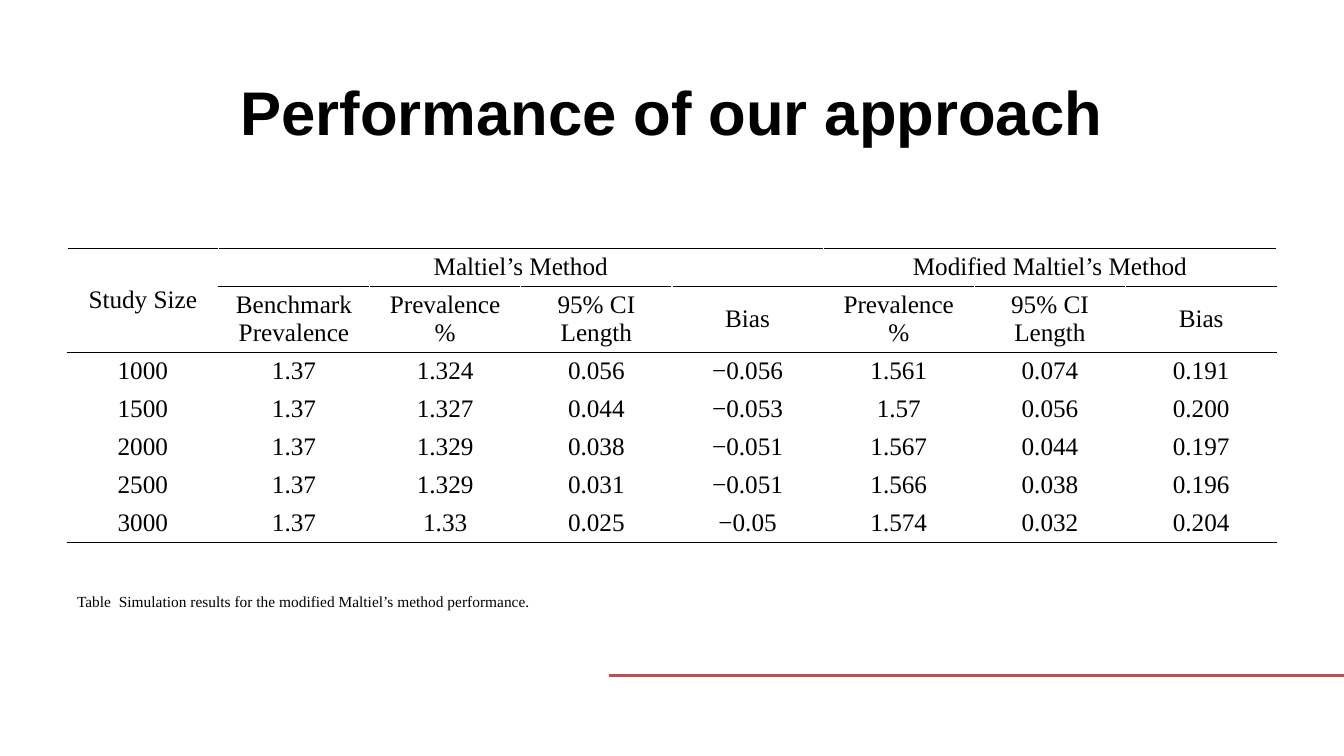
from lxml.etree import SubElement
from pptx import Presentation
from pptx.dml.color import RGBColor
from pptx.enum.shapes import MSO_CONNECTOR
from pptx.enum.text import MSO_ANCHOR, PP_ALIGN
from pptx.oxml.ns import qn
from pptx.util import Pt

TITLE = "Performance of our approach"
CAPTION = "Table  Simulation results for the modified Maltiel’s method performance."
ROWS = [
    ["Study Size", "Maltiel’s Method", "", "", "", "Modified Maltiel’s Method", "", ""],
    ["", "Benchmark Prevalence", "Prevalence%", "95% CI Length", "Bias",
     "Prevalence%", "95% CI Length", "Bias"],
    ["1000", "1.37", "1.324", "0.056", "−0.056", "1.561", "0.074", "0.191"],
    ["1500", "1.37", "1.327", "0.044", "−0.053", "1.57", "0.056", "0.200"],
    ["2000", "1.37", "1.329", "0.038", "−0.051", "1.567", "0.044", "0.197"],
    ["2500", "1.37", "1.329", "0.031", "−0.051", "1.566", "0.038", "0.196"],
    ["3000", "1.37", "1.33", "0.025", "−0.05", "1.574", "0.032", "0.204"],
]
MERGES = [((0, 0), (1, 0)), ((0, 1), (0, 4)), ((0, 5), (0, 7))]
RULED_SIDES = {0: ["lnT", "lnB"], 1: ["lnT", "lnB"], 2: ["lnT"], 6: ["lnB"]}
BLACK, RED = "000000", "C0504D"
SERIF = "Times New Roman"
PAGE_WIDTH, PAGE_HEIGHT = 960, 540
MARGIN = 48
CONTENT_WIDTH = PAGE_WIDTH - 2 * MARGIN
ROW_HEIGHT, HEADING_HEIGHT = 27.14, 47.14


def color(value):
    return RGBColor.from_string(value)


def format_text(para, font_name, size, alignment, bold=False):
    para.alignment = alignment
    for span in para.runs:
        span.font.name = font_name
        span.font.size = Pt(size)
        span.font.bold = bold
        span.font.color.rgb = color(BLACK)


def add_rule(cell, side):
    """Draw a thin black border on one side of a cell."""
    border = SubElement(cell._tc.get_or_add_tcPr(), qn(f"a:{side}"), w=str(Pt(0.5)))
    fill = SubElement(border, qn("a:solidFill"))
    SubElement(fill, qn("a:srgbClr"), val=BLACK)


def add_results(page):
    frame = page.shapes.add_table(
        len(ROWS), len(ROWS[0]), Pt(MARGIN), Pt(177.12), Pt(CONTENT_WIDTH),
        Pt(ROW_HEIGHT * (len(ROWS) - 1) + HEADING_HEIGHT))
    table = frame.table
    table.first_row = False
    table.horz_banding = False
    for column in table.columns:
        column.width = Pt(CONTENT_WIDTH / len(ROWS[0]))
    for first, last in MERGES:
        table.cell(*first).merge(table.cell(*last))
    for row_index, values in enumerate(ROWS):
        table.rows[row_index].height = Pt(HEADING_HEIGHT if row_index == 1 else ROW_HEIGHT)
        for column_index, value in enumerate(values):
            cell = table.cell(row_index, column_index)
            if not cell.is_spanned or row_index == 0:
                for side in RULED_SIDES.get(row_index, []):
                    add_rule(cell, side)
            cell.fill.background()
            if cell.is_spanned:
                continue
            cell.vertical_anchor = MSO_ANCHOR.MIDDLE
            cell.text_frame.text = value
            format_text(cell.text_frame.paragraphs[0], SERIF, 18, PP_ALIGN.CENTER)


def main():
    deck = Presentation()
    deck.slide_width, deck.slide_height = Pt(PAGE_WIDTH), Pt(PAGE_HEIGHT)
    page = deck.slides.add_slide(deck.slide_layouts[5])

    accent = page.shapes.add_connector(
        MSO_CONNECTOR.STRAIGHT, Pt(434.88), Pt(482.4), Pt(PAGE_WIDTH), Pt(482.4))
    accent.line.color.rgb = color(RED)
    accent.line.width = Pt(2.25)
    SubElement(accent._element.spPr, qn("a:effectLst"))

    title = page.shapes.title
    title.left, title.top = Pt(MARGIN), Pt(13)
    title.width, title.height = Pt(CONTENT_WIDTH), Pt(132.5)
    title.text_frame.text = TITLE
    title.text_frame.vertical_anchor = MSO_ANCHOR.MIDDLE
    format_text(title.text_frame.paragraphs[0], "Arial", 44, PP_ALIGN.CENTER, bold=True)

    add_results(page)

    caption = page.shapes.add_textbox(Pt(MARGIN), Pt(419), Pt(412), Pt(20.6))
    caption.text_frame.word_wrap = True
    caption.text_frame.vertical_anchor = MSO_ANCHOR.MIDDLE
    caption.text_frame.text = CAPTION
    format_text(caption.text_frame.paragraphs[0], SERIF, 11, PP_ALIGN.LEFT)

    deck.save("out.pptx")


if __name__ == "__main__":
    main()
